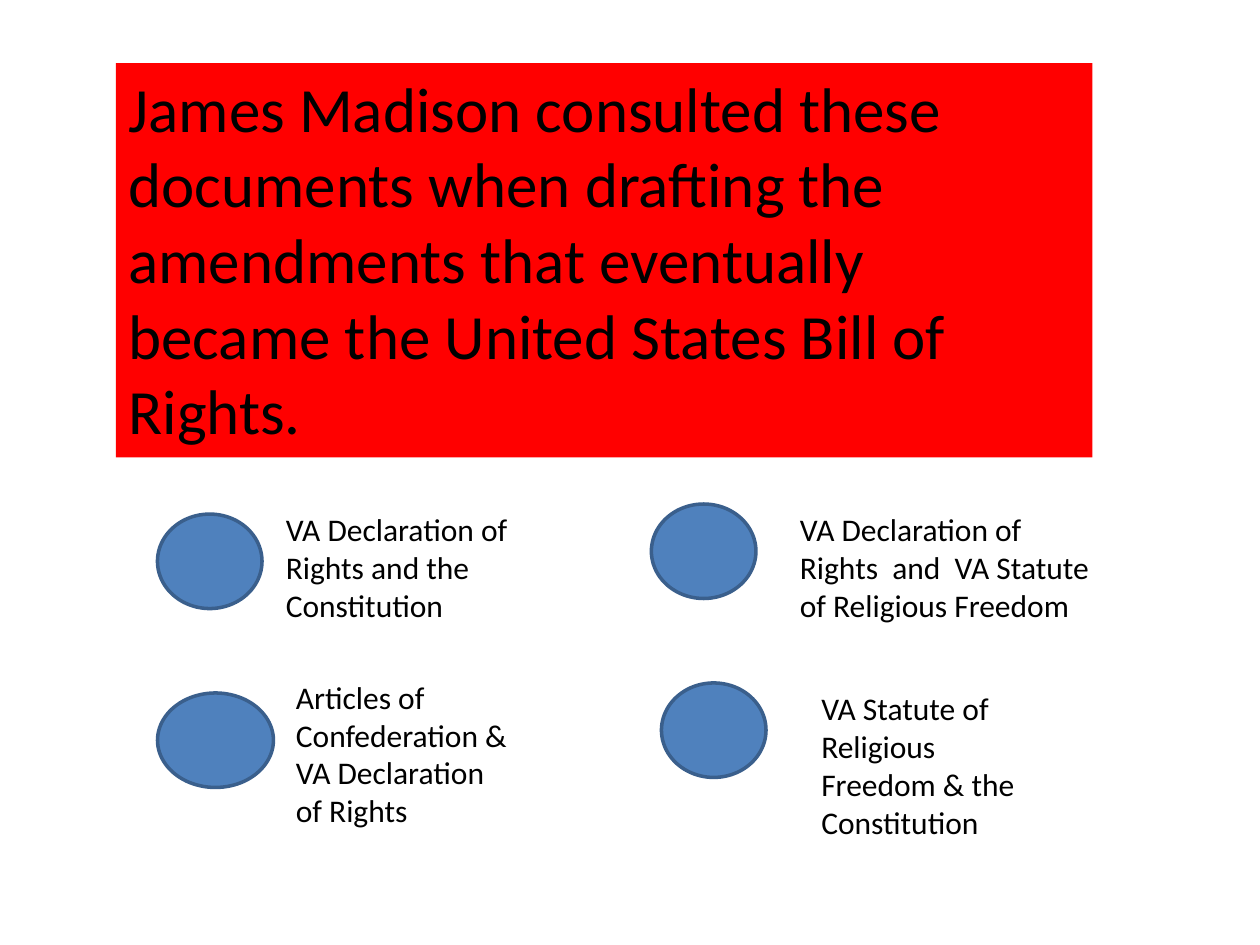
"""Builds a quiz slide with a question banner and four answer choices."""
from pptx import Presentation
from pptx.dml.color import RGBColor
from pptx.enum.shapes import MSO_SHAPE
from pptx.enum.text import MSO_ANCHOR, MSO_AUTO_SIZE, PP_ALIGN
from pptx.util import Inches, Pt

COLORS = {"banner": "FF0000", "button": "4F81BD", "outline": "3A5F8C", "text": "000000"}
FONT = "Calibri"
QUESTION = ("James Madison consulted these documents when drafting the amendments "
            "that eventually became the United States Bill of Rights.")
BANNER = (0.92, 0.5, 7.75, 3.13)
BUTTON_H = 0.75
CHOICES = [
    {"text": "VA Declaration of Rights and the Constitution",
     "button": (1.25, 4.08, 0.83), "label": (2.17, 4, 2.58, 1.01)},
    {"text": "VA Declaration of Rights  and  VA Statute of Religious Freedom",
     "button": (5.17, 4, 0.83), "label": (6.25, 4, 2.58, 1.01)},
    {"text": "Articles of Confederation & VA Declaration of Rights",
     "button": (1.25, 5.5, 0.92), "label": (2.25, 5.33, 1.92, 1.31)},
    {"text": "VA Statute of Religious Freedom & the Constitution",
     "button": (5.25, 5.42, 0.83), "label": (6.42, 5.42, 1.83, 1.31)},
]


def color(name):
    return RGBColor.from_string(COLORS[name])


def write(sp, text, size):
    tf = sp.text_frame
    tf.word_wrap = True
    tf.auto_size = MSO_AUTO_SIZE.NONE
    tf.vertical_anchor = MSO_ANCHOR.TOP
    tf.text = text
    p = tf.paragraphs[0]
    p.alignment = PP_ALIGN.LEFT
    p.font.name = FONT
    p.font.size = Pt(size)
    p.font.color.rgb = color("text")


def add_banner(s):
    sp = s.shapes.title
    sp.left, sp.top, sp.width, sp.height = map(Inches, BANNER)
    sp.fill.solid()
    sp.fill.fore_color.rgb = color("banner")
    write(sp, QUESTION, 36)


def add_choice(s, choice):
    box = map(Inches, (*choice["button"], BUTTON_H))
    sp = s.shapes.add_shape(MSO_SHAPE.OVAL, *box)
    sp.shadow.inherit = False
    sp.fill.solid()
    sp.fill.fore_color.rgb = color("button")
    sp.line.color.rgb = color("outline")
    sp.line.width = Pt(2)
    write(s.shapes.add_textbox(*map(Inches, choice["label"])), choice["text"], 18)


def main():
    prs = Presentation()
    prs.slide_width, prs.slide_height = Inches(10), Inches(7.5)
    s = prs.slides.add_slide(prs.slide_layouts[5])
    add_banner(s)
    for choice in CHOICES:
        add_choice(s, choice)
    prs.save("out.pptx")


if __name__ == "__main__":
    main()
